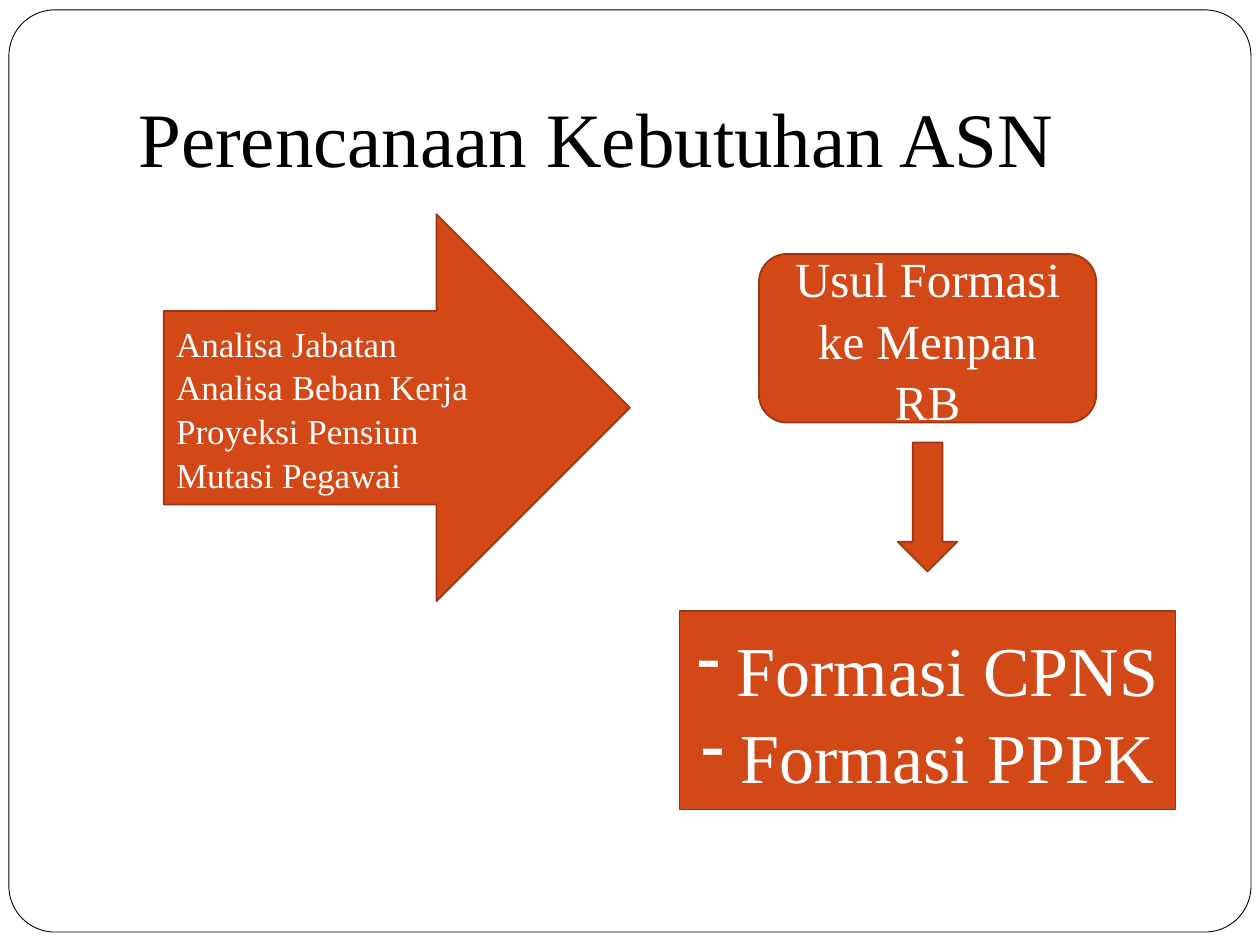
"""Build the slide on planning civil-service staffing needs."""
from dataclasses import dataclass

from lxml import etree
from pptx import Presentation
from pptx.dml.color import RGBColor
from pptx.enum.shapes import MSO_SHAPE
from pptx.enum.text import MSO_ANCHOR, PP_ALIGN
from pptx.oxml.ns import qn
from pptx.util import Cm, Pt

RECT = MSO_SHAPE.RECTANGLE
ROUNDED = MSO_SHAPE.ROUNDED_RECTANGLE
RIGHT_ARROW = MSO_SHAPE.RIGHT_ARROW
DOWN_ARROW = MSO_SHAPE.DOWN_ARROW
MIDDLE, BOTTOM = MSO_ANCHOR.MIDDLE, MSO_ANCHOR.BOTTOM
CENTER, JUSTIFY, LEFT = PP_ALIGN.CENTER, PP_ALIGN.JUSTIFY, PP_ALIGN.LEFT


@dataclass(frozen=True)
class Theme:
    font: str = "Times New Roman"
    white: RGBColor = RGBColor(0xFF, 0xFF, 0xFF)
    black: RGBColor = RGBColor(0, 0, 0)
    orange: RGBColor = RGBColor(0xD3, 0x48, 0x17)
    rust: RGBColor = RGBColor(0x9C, 0x35, 0x11)
    title_size: float = 44
    input_size: float = 20
    proposal_size: float = 28
    result_size: float = 40
    leading: float = 1.04


THEME = Theme()


@dataclass(frozen=True)
class Box:
    left: float
    top: float
    width: float
    height: float

    def lengths(self) -> tuple:
        return Cm(self.left), Cm(self.top), Cm(self.width), Cm(self.height)


@dataclass(frozen=True)
class Step:
    kind: int
    box: Box
    lines: tuple = ()
    size: float = 18
    align: int = CENTER
    dashed: bool = False


STEPS = (
    Step(RIGHT_ARROW, Box(3.3, 4.32, 9.4, 7.8),
         ("Analisa Jabatan", "Analisa Beban Kerja", "Proyeksi Pensiun", "Mutasi Pegawai"),
         THEME.input_size, JUSTIFY),
    Step(ROUNDED, Box(15.3, 5.12, 6.8, 3.4), ("Usul Formasi ke Menpan RB",), THEME.proposal_size),
    Step(DOWN_ARROW, Box(18.1, 8.92, 1.2, 2.6)),
    Step(RECT, Box(13.7, 12.32, 10, 4), ("Formasi CPNS", "Formasi PPPK"),
         THEME.result_size, dashed=True),
)


def add_shape(s, kind: int, box: Box, fill: RGBColor, line: RGBColor, weight: float):
    sp = s.shapes.add_shape(kind, *box.lengths())
    sp.shadow.inherit = False
    sp.fill.solid()
    sp.fill.fore_color.rgb = fill
    sp.line.color.rgb = line
    sp.line.width = Pt(weight)
    return sp


def write(tf, lines: tuple, size: float, color: RGBColor, align: int) -> None:
    tf.word_wrap = True
    for i, line in enumerate(lines):
        p = tf.paragraphs[0] if i == 0 else tf.add_paragraph()
        p.text = line
        p.alignment = align
        p.font.name = THEME.font
        p.font.size = Pt(size)
        p.font.color.rgb = color


def add_dash(p) -> None:
    pPr = p._p.get_or_add_pPr()
    pPr.set("marL", str(Cm(0.8)))
    pPr.set("indent", str(-Cm(0.8)))
    bullet = etree.Element(qn("a:buChar"), char="-")
    pPr.insert_element_before(bullet, "a:tabLst", "a:defRPr", "a:extLst")


def add_step(s, step: Step) -> None:
    sp = add_shape(s, step.kind, step.box, THEME.orange, THEME.rust, 1)
    tf = sp.text_frame
    tf.vertical_anchor = MIDDLE
    write(tf, step.lines, step.size, THEME.white, step.align)
    if step.lines:
        for p in tf.paragraphs:
            p.line_spacing = THEME.leading
            if step.dashed:
                add_dash(p)


def add_title(s, text: str) -> None:
    tf = s.shapes.add_textbox(*Box(2.54, 0.76, 21.59, 3.18).lengths()).text_frame
    tf.vertical_anchor = BOTTOM
    tf.margin_bottom = Cm(0.25)
    write(tf, (text,), THEME.title_size, THEME.black, LEFT)


def main() -> None:
    prs = Presentation()
    prs.slide_width, prs.slide_height = Cm(25.4), Cm(19.05)
    s = prs.slides.add_slide(prs.slide_layouts[6])
    frame = add_shape(s, ROUNDED, Box(0.18, 0.2, 25.04, 18.59), THEME.white, THEME.black, 0.5)
    frame.adjustments[0] = 0.05
    add_title(s, "Perencanaan Kebutuhan ASN")
    for step in STEPS:
        add_step(s, step)
    prs.save("out.pptx")


if __name__ == "__main__":
    main()
